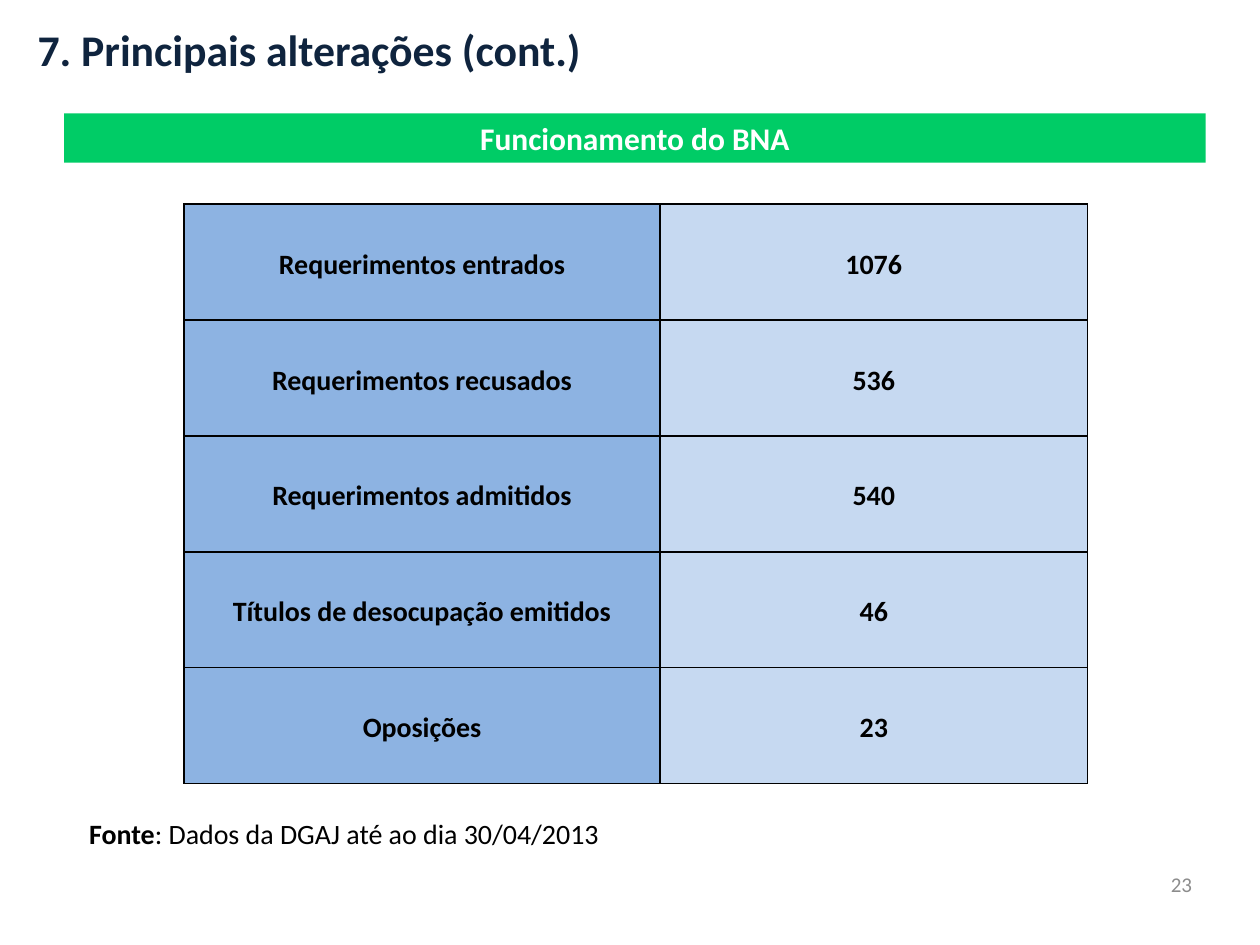
from dataclasses import dataclass

from lxml import etree
from pptx import Presentation
from pptx.dml.color import RGBColor
from pptx.enum.shapes import MSO_SHAPE
from pptx.enum.text import MSO_ANCHOR, PP_ALIGN
from pptx.oxml.ns import qn
from pptx.util import Inches, Pt

RECTANGLE = MSO_SHAPE.RECTANGLE
TOP, MIDDLE = MSO_ANCHOR.TOP, MSO_ANCHOR.MIDDLE
LEFT, CENTER, RIGHT, JUSTIFY = PP_ALIGN.LEFT, PP_ALIGN.CENTER, PP_ALIGN.RIGHT, PP_ALIGN.JUSTIFY


@dataclass(frozen=True)
class Theme:
    font: str = "Calibri"
    navy: str = "0F243E"
    green: str = "00CC66"
    white: str = "FFFFFF"
    black: str = "000000"
    gray: str = "8C8C8C"
    label_fill: str = "8DB3E2"
    value_fill: str = "C6D9F1"
    title_size: float = 25
    banner_size: float = 18
    body_size: float = 16
    number_size: float = 12
    border: float = 1


def apply_format(target, values):
    for attribute, value in values.items():
        setattr(target, attribute, value)


class SlideBuilder:
    def __init__(self, slide, theme):
        self.slide = slide
        self.theme = theme

    def add_runs(self, frame, runs, size, color, align=LEFT, spacing=None):
        paragraph = frame.paragraphs[0]
        apply_format(paragraph, {"alignment": align, "line_spacing": spacing})
        for words, bold in runs:
            run = paragraph.add_run()
            run.text = words
            apply_format(run.font, {"name": self.theme.font, "size": Pt(size), "bold": bold})
            run.font.color.rgb = RGBColor.from_string(color)

    def text(self, box, runs, size, color, align=LEFT, anchor=TOP, wrap=True):
        frame = self.slide.shapes.add_textbox(*map(Inches, box)).text_frame
        apply_format(frame, {"word_wrap": wrap, "vertical_anchor": anchor})
        self.add_runs(frame, runs, size, color, align)

    def banner(self, box, words):
        bar = self.slide.shapes.add_shape(RECTANGLE, *map(Inches, box))
        bar.shadow.inherit = False
        bar.fill.solid()
        bar.fill.fore_color.rgb = RGBColor.from_string(self.theme.green)
        bar.line.fill.background()
        bar.text_frame.vertical_anchor = MIDDLE
        self.add_runs(bar.text_frame, [(words, True)], self.theme.banner_size,
                      self.theme.white, CENTER)

    def outline(self, cell):
        properties = cell._tc.get_or_add_tcPr()
        for side in ("lnL", "lnR", "lnT", "lnB"):
            line = etree.SubElement(properties, qn(f"a:{side}"), w=str(Pt(self.theme.border)))
            fill = etree.SubElement(line, qn("a:solidFill"))
            etree.SubElement(fill, qn("a:srgbClr"), val=self.theme.black)

    def table(self, box, widths, rows):
        grid = self.slide.shapes.add_table(len(rows), len(widths), *map(Inches, box)).table
        apply_format(grid, {"first_row": False, "horz_banding": False})
        for column, width in zip(grid.columns, widths):
            column.width = Inches(width)
        cell_format = {"vertical_anchor": MIDDLE,
                       "margin_left": Inches(0.07), "margin_right": Inches(0.07),
                       "margin_top": 0, "margin_bottom": 0}
        fills = (self.theme.label_fill, self.theme.value_fill)
        for row, entries in zip(grid.rows, rows):
            for cell, words, color in zip(row.cells, entries, fills):
                apply_format(cell, cell_format)
                self.outline(cell)
                cell.fill.solid()
                cell.fill.fore_color.rgb = RGBColor.from_string(color)
                self.add_runs(cell.text_frame, [(words, True)], self.theme.body_size,
                              self.theme.black, CENTER, 1.15)


def main():
    presentation = Presentation()
    apply_format(presentation, {"slide_width": Inches(10), "slide_height": Inches(7.5)})
    theme = Theme()
    builder = SlideBuilder(presentation.slides.add_slide(presentation.slide_layouts[6]), theme)

    builder.text((0.2, 0.13, 4.56, 0.52), [("7. Principais alterações (cont.)", True)],
                 theme.title_size, theme.navy, wrap=False)
    builder.banner((0.51, 0.9, 9.06, 0.39), "Funcionamento do BNA")
    builder.table((1.46, 1.62, 7.17, 4.6), (3.78, 3.39), [
        ("Requerimentos entrados", "1076"),
        ("Requerimentos recusados", "536"),
        ("Requerimentos admitidos", "540"),
        ("Títulos de desocupação emitidos", "46"),
        ("Oposições", "23"),
    ])
    builder.text((0.61, 6.43, 5.06, 0.37),
                 [("Fonte", True), (": Dados da DGAJ até ao dia 30/04/2013", False)],
                 theme.body_size, theme.black, JUSTIFY)
    builder.text((7.23, 6.82, 2.33, 0.4), [("23", False)],
                 theme.number_size, theme.gray, RIGHT, MIDDLE)
    presentation.save("out.pptx")


if __name__ == "__main__":
    main()
